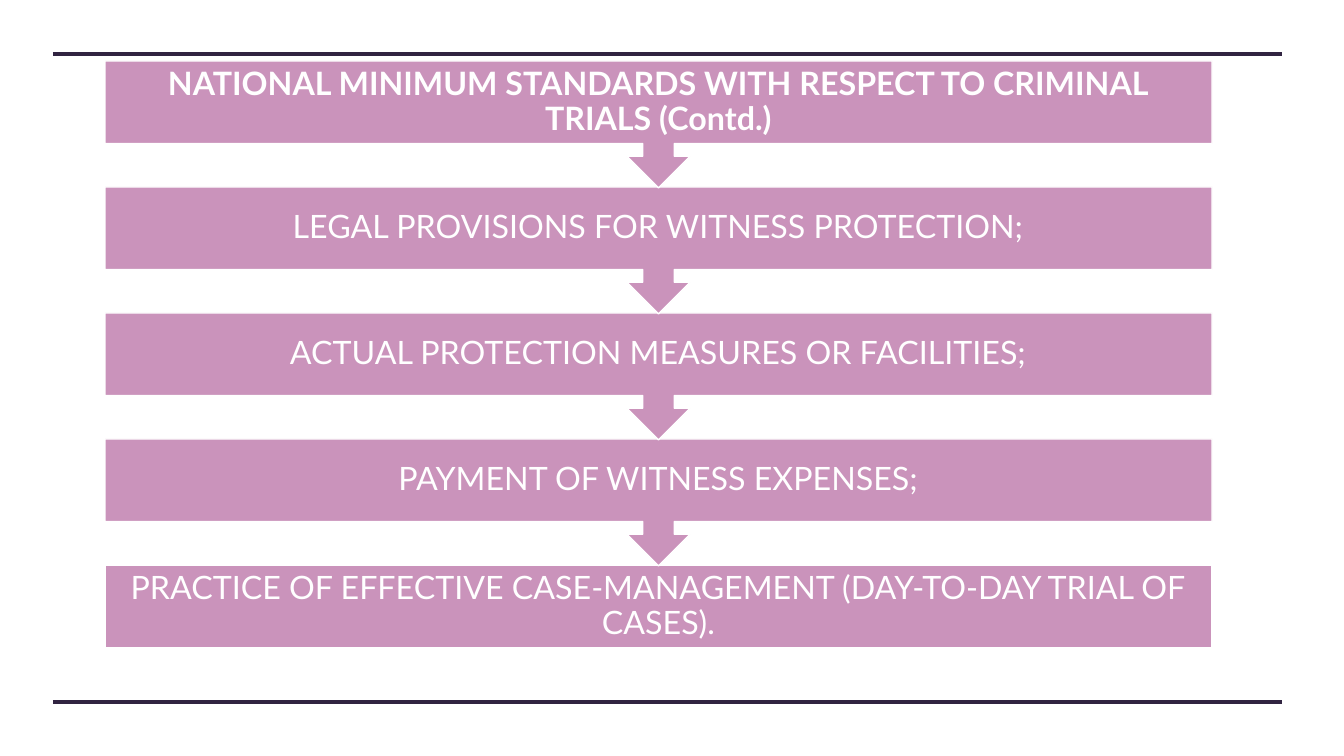
from dataclasses import dataclass

import pptx
import pptx.dml.color
import pptx.enum.shapes
import pptx.enum.text
import pptx.oxml.ns
import pptx.shapes.autoshape
import pptx.shapes.base
import pptx.slide
import pptx.util
from lxml import etree

EMU_PER_PX = 914400 / 100.8
PLUM = pptx.dml.color.RGBColor(0x31, 0x24, 0x41)
MAUVE = pptx.dml.color.RGBColor(0xCA, 0x93, 0xBB)
WHITE = pptx.dml.color.RGBColor(0xFF, 0xFF, 0xFF)
PRESETS = pptx.enum.shapes.MSO_SHAPE

PAGE_WIDTH, PAGE_HEIGHT = 1344, 756
RULE_LEFT, RULE_RIGHT = 53, 1282
RULE_TOPS = (54, 702)
STEP_LEFT, STEP_WIDTH = 105, 1107
FIRST_TOP, STEP_PITCH = 61, 126
BOX_HEIGHT, CALLOUT_HEIGHT = 83, 127
INSET = 18

HEADING = "NATIONAL MINIMUM STANDARDS WITH RESPECT TO CRIMINAL TRIALS (Contd.)"
STANDARDS = (
    "LEGAL PROVISIONS FOR WITNESS PROTECTION;",
    "ACTUAL PROTECTION MEASURES OR FACILITIES;",
    "PAYMENT OF WITNESS EXPENSES;",
    "PRACTICE OF EFFECTIVE CASE-MANAGEMENT (DAY-TO-DAY TRIAL OF CASES).",
)


@dataclass(frozen=True)
class Step:
    text: str
    top: int
    height: int
    preset: PRESETS


def px(length: int) -> pptx.util.Emu:
    return pptx.util.Emu(round(length * EMU_PER_PX))


def set_attributes(target: object, values: dict[str, object]) -> None:
    for name, value in values.items():
        setattr(target, name, value)


def write_text(box: pptx.shapes.base.BaseShape, text: str, bold: bool) -> None:
    frame = box.text_frame
    frame.text = text
    set_attributes(frame, {
        "word_wrap": True,
        "auto_size": pptx.enum.text.MSO_AUTO_SIZE.NONE,
        "vertical_anchor": pptx.enum.text.MSO_ANCHOR.MIDDLE,
        "margin_left": px(INSET),
        "margin_top": px(INSET),
        "margin_right": px(INSET),
        "margin_bottom": px(INSET),
    })
    para = frame.paragraphs[0]
    set_attributes(para, {
        "alignment": pptx.enum.text.PP_ALIGN.CENTER,
        "line_spacing": 0.9,
    })
    span = para.runs[0]
    set_attributes(span.font, {
        "name": "Lato",
        "size": pptx.util.Pt(23),
        "bold": bold,
    })
    span.font.color.rgb = WHITE


def add_rule(page: pptx.slide.Slide, top: int) -> None:
    rule = page.shapes.add_connector(
        pptx.enum.shapes.MSO_CONNECTOR.STRAIGHT,
        px(RULE_LEFT), px(top), px(RULE_RIGHT), px(top),
    )
    rule.line.color.rgb = PLUM
    rule.line.width = pptx.util.Pt(2.25)
    properties = rule.element.find(pptx.oxml.ns.qn("p:spPr"))
    etree.SubElement(properties, pptx.oxml.ns.qn("a:effectLst"))


def add_step(page: pptx.slide.Slide, step: Step) -> pptx.shapes.autoshape.Shape:
    box = page.shapes.add_shape(
        step.preset, px(STEP_LEFT), px(step.top), px(STEP_WIDTH), px(step.height)
    )
    box.shadow.inherit = False
    box.fill.solid()
    box.fill.fore_color.rgb = MAUVE
    box.line.color.rgb = WHITE
    box.line.width = pptx.util.Pt(1)
    if step.text:
        write_text(box, step.text, bold=False)
    return box


def place_title(page: pptx.slide.Slide, backing: pptx.shapes.autoshape.Shape) -> None:
    title = page.shapes.title
    set_attributes(title, {
        "left": px(STEP_LEFT),
        "top": px(FIRST_TOP),
        "width": px(STEP_WIDTH),
        "height": px(BOX_HEIGHT),
    })
    write_text(title, HEADING, bold=True)
    backing.element.addnext(title.element)


def main() -> None:
    deck = pptx.Presentation()
    set_attributes(deck, {
        "slide_width": px(PAGE_WIDTH),
        "slide_height": px(PAGE_HEIGHT),
    })
    page = deck.slides.add_slide(deck.slide_layouts.get_by_name("Title Only"))
    for top in RULE_TOPS:
        add_rule(page, top)

    last = len(STANDARDS)
    steps = [
        Step(
            text,
            FIRST_TOP + index * STEP_PITCH,
            BOX_HEIGHT if index == last else CALLOUT_HEIGHT,
            PRESETS.RECTANGLE if index == last else PRESETS.DOWN_ARROW_CALLOUT,
        )
        for index, text in enumerate(("", *STANDARDS))
    ]
    boxes = [add_step(page, step) for step in reversed(steps)]
    place_title(page, boxes[-1])
    deck.save("out.pptx")


if __name__ == "__main__":
    main()
